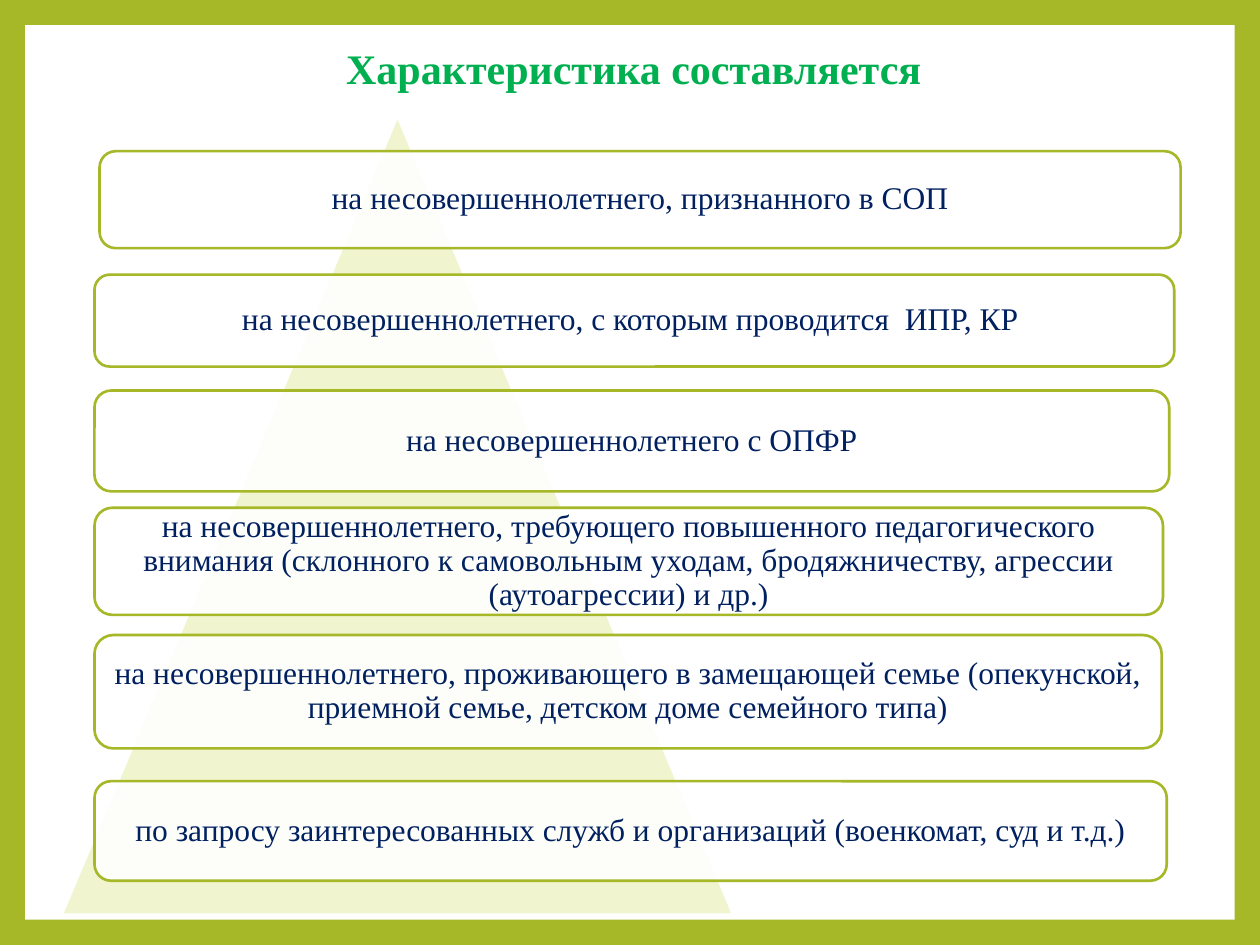
"""Build a slide listing the minors for whom a characteristic is drawn up."""
from typing import NamedTuple

from lxml import etree
from pptx import Presentation
from pptx.dml.color import RGBColor
from pptx.enum import shapes, text
from pptx.oxml import ns
from pptx.util import Inches, Pt

COLORS = {
    "frame": "A6B727",
    "page": "FFFFFF",
    "pyramid": "F0F5D0",
    "case": "002060",
    "title": "00B050",
}
FONT = "Times New Roman"
LEFT = 0.75


class Case(NamedTuple):
    """One rounded box with its wording."""

    wording: str
    top: float
    width: float
    height: float
    left: float = LEFT


CASES = [
    Case("на несовершеннолетнего, признанного в СОП", 1.2, 8.58, 0.77, 0.79),
    Case("на несовершеннолетнего, с которым проводится  ИПР, КР ", 2.18, 8.57, 0.73),
    Case("на несовершеннолетнего c ОПФР", 3.1, 8.53, 0.8),
    Case("на несовершеннолетнего, требующего повышенного педагогического внимания "
         "(склонного к самовольным уходам, бродяжничеству, агрессии "
         "(аутоагрессии) и др.)", 4.03, 8.48, 0.85),
    Case("на несовершеннолетнего, проживающего в замещающей семье (опекунской, "
         "приемной семье, детском доме семейного типа)", 5.04, 8.47, 0.9),
    Case("по запросу заинтересованных служб и организаций (военкомат, суд и т.д.)",
         6.2, 8.51, 0.79),
]


def rgb(name: str) -> RGBColor:
    """Return the named colour."""
    return RGBColor.from_string(COLORS[name])


def add_figure(slide, kind, box: tuple, fill: str, line: str | None = None):
    """Add a flat preset shape."""
    figure = slide.shapes.add_shape(kind, *map(Inches, box))
    figure.shadow.inherit = False
    figure.fill.solid()
    figure.fill.fore_color.rgb = rgb(fill)
    if line:
        figure.line.color.rgb = rgb(line)
        figure.line.width = Pt(1.5)
    else:
        figure.line.fill.background()
    return figure


def write(holder, wording: str, size: float, color: str, bold: bool = False,
          **frame_format):
    """Write one centred paragraph and return it."""
    frame = holder.text_frame
    frame_format |= {"word_wrap": True, "vertical_anchor": text.MSO_ANCHOR.MIDDLE}
    for name, value in frame_format.items():
        setattr(frame, name, value)
    paragraph = frame.paragraphs[0]
    paragraph.alignment = text.PP_ALIGN.CENTER
    run = paragraph.add_run()
    run.text = wording
    for name, value in {"name": FONT, "size": Pt(size), "bold": bold}.items():
        setattr(run.font, name, value)
    run.font.color.rgb = rgb(color)
    return paragraph


def add_case(slide, case: Case) -> None:
    """Add a slightly transparent rounded box with its wording."""
    box = add_figure(slide, shapes.MSO_SHAPE.ROUNDED_RECTANGLE,
                     (case.left, case.top, case.width, case.height), "page", "frame")
    fill_color = next(box.fill._xPr.iter(ns.qn("a:srgbClr")))
    etree.SubElement(fill_color, ns.qn("a:alpha"), val="90000")
    margins = {f"margin_{side}": Inches(0.07)
               for side in ("left", "top", "right", "bottom")}
    write(box, case.wording, 18, "case", **margins).line_spacing = 0.9


def main() -> None:
    """Draw the slide and save it."""
    deck = Presentation()
    deck.slide_width, deck.slide_height = Inches(10), Inches(7.5)
    slide = deck.slides.add_slide(deck.slide_layouts[6])
    slide.background.fill.solid()
    slide.background.fill.fore_color.rgb = rgb("frame")

    add_figure(slide, shapes.MSO_SHAPE.RECTANGLE, (0.2, 0.2, 9.6, 7.1), "page")
    add_figure(slide, shapes.MSO_SHAPE.ISOSCELES_TRIANGLE,
               (0.49, 0.92, 5.33, 6.34), "pyramid", "page")
    for case in CASES:
        add_case(slide, case)

    title = slide.shapes.add_textbox(*map(Inches, (0, 0.29, 9.57, 0.5)))
    heading = write(title, "Характеристика составляется", 24, "title", bold=True)
    heading._p.get_or_add_pPr().set("indent", str(Inches(0.49)))
    deck.save("out.pptx")


if __name__ == "__main__":
    main()
